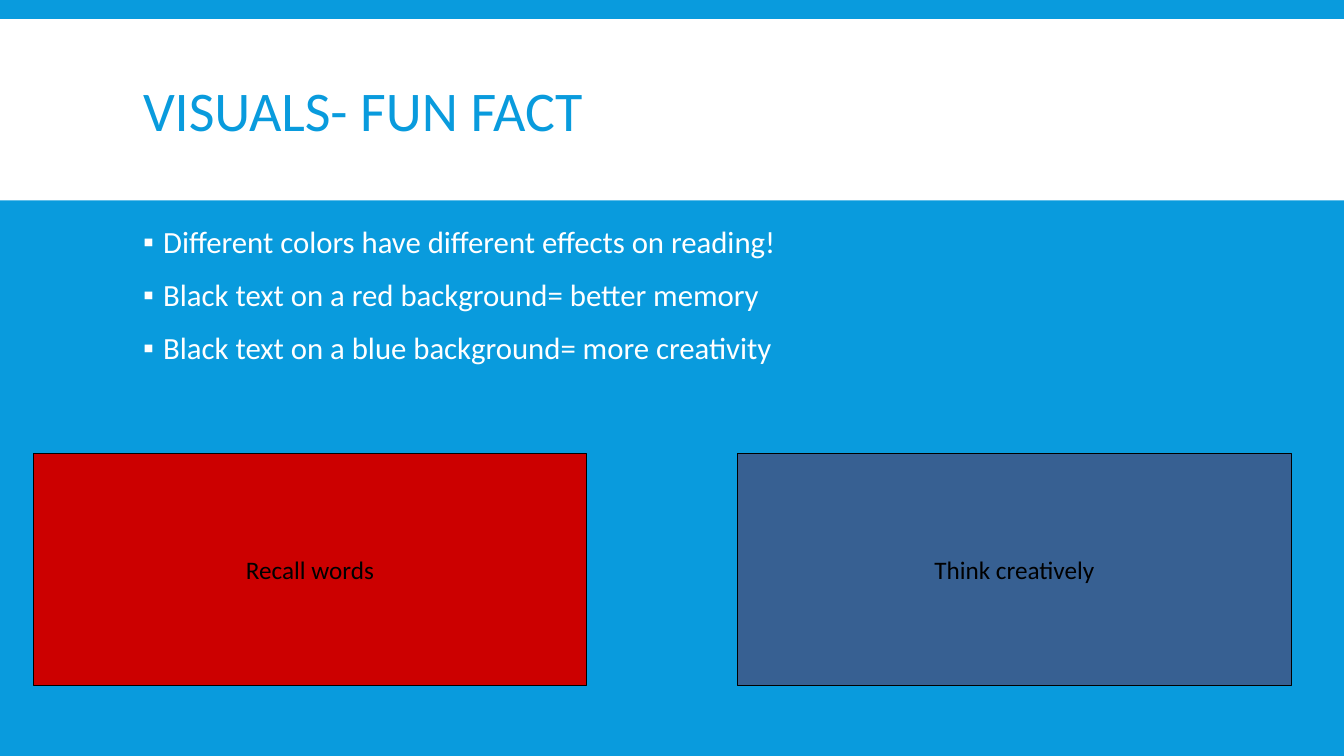
from lxml.etree import SubElement
from pptx import Presentation
from pptx.dml.color import RGBColor
from pptx.enum.shapes import MSO_SHAPE
from pptx.enum.text import MSO_ANCHOR, MSO_AUTO_SIZE, PP_ALIGN
from pptx.oxml.ns import qn
from pptx.util import Cm, Pt

SKY, WHITE, BLACK, RED, BLUE = "099BDD", "FFFFFF", "000000", "CC0000", "376092"
SLIDE_WIDTH, SLIDE_HEIGHT = 33.87, 19.05
CONTENT_LEFT, CONTENT_WIDTH = 3.35, 27.18
FACTS = [
    "Different colors have different effects on reading!",
    "Black text on a red background= better memory",
    "Black text on a blue background= more creativity",
]


def color(hex_string):
    return RGBColor.from_string(hex_string)


def place(shape, box):
    shape.left, shape.top, shape.width, shape.height = map(Cm, box)


def write(shape, lines, size, text_color, align=PP_ALIGN.LEFT,
          anchor=MSO_ANCHOR.MIDDLE, wrap=True, line_spacing=1.0, before=0, after=0):
    """Fill the shape with one formatted paragraph per line."""
    frame = shape.text_frame
    frame.text = "\n".join(lines)
    frame.word_wrap = wrap
    frame.auto_size = MSO_AUTO_SIZE.NONE
    frame.vertical_anchor = anchor
    for paragraph in frame.paragraphs:
        paragraph.alignment = align
        paragraph.line_spacing = line_spacing
        paragraph.space_before, paragraph.space_after = Pt(before), Pt(after)
        font = paragraph.runs[0].font
        font.name, font.size = "Calibri", Pt(size)
        font.color.rgb = color(text_color)


def add_bullet(paragraph, bullet_color, indent):
    properties = paragraph._p.get_or_add_pPr()
    properties.set("marL", str(Cm(indent)))
    properties.set("indent", str(-Cm(indent)))
    bullet_fill = SubElement(properties, qn("a:buClr"))
    SubElement(bullet_fill, qn("a:srgbClr"), val=bullet_color)
    SubElement(properties, qn("a:buFont"), typeface="Arial")
    SubElement(properties, qn("a:buChar"), char="▪")


def add_rectangle(slide, box, fill, line=None):
    shape = slide.shapes.add_shape(MSO_SHAPE.RECTANGLE, *map(Cm, box))
    shape.shadow.inherit = False
    shape.fill.solid()
    shape.fill.fore_color.rgb = color(fill)
    if line:
        shape.line.color.rgb = color(line)
        shape.line.width = Pt(0.75)
    else:
        shape.line.fill.background()
    return shape


def add_header(slide, box, title):
    left, top, width, height = box
    band = add_rectangle(slide, box, WHITE)
    slide.shapes._spTree.insert(2, band._element)  # behind the title
    place(slide.shapes.title, (left + CONTENT_LEFT, top + 0.3, CONTENT_WIDTH, height - 0.38))
    write(slide.shapes.title, [title], 40, SKY, line_spacing=0.85)


def add_facts(slide, box):
    body = slide.placeholders[1]
    place(body, box)
    write(body, FACTS, 22, WHITE, anchor=MSO_ANCHOR.TOP,
          line_spacing=0.9, before=12, after=2)
    for paragraph in body.text_frame.paragraphs:
        add_bullet(paragraph, WHITE, 0.51)


def add_color_samples(slide, box):
    left, top, width, height = box
    sample_width = 13.95
    samples = [(left, RED, "Recall words"),
               (left + width - sample_width, BLUE, "Think creatively")]
    for sample_left, fill, label in samples:
        sample = add_rectangle(slide, (sample_left, top, sample_width, height), fill, BLACK)
        write(sample, [label], 18, BLACK, align=PP_ALIGN.CENTER, wrap=False)


def main():
    presentation = Presentation()
    presentation.slide_width, presentation.slide_height = Cm(SLIDE_WIDTH), Cm(SLIDE_HEIGHT)
    slide = presentation.slides.add_slide(presentation.slide_layouts[1])
    slide.background.fill.solid()
    slide.background.fill.fore_color.rgb = color(SKY)
    add_header(slide, (0, 0.48, SLIDE_WIDTH, 4.57), "VISUALS- FUN FACT")
    add_facts(slide, (CONTENT_LEFT, 5.59, CONTENT_WIDTH, 11.68))
    add_color_samples(slide, (0.84, 11.43, 31.7, 5.84))
    presentation.save("out.pptx")


if __name__ == "__main__":
    main()
